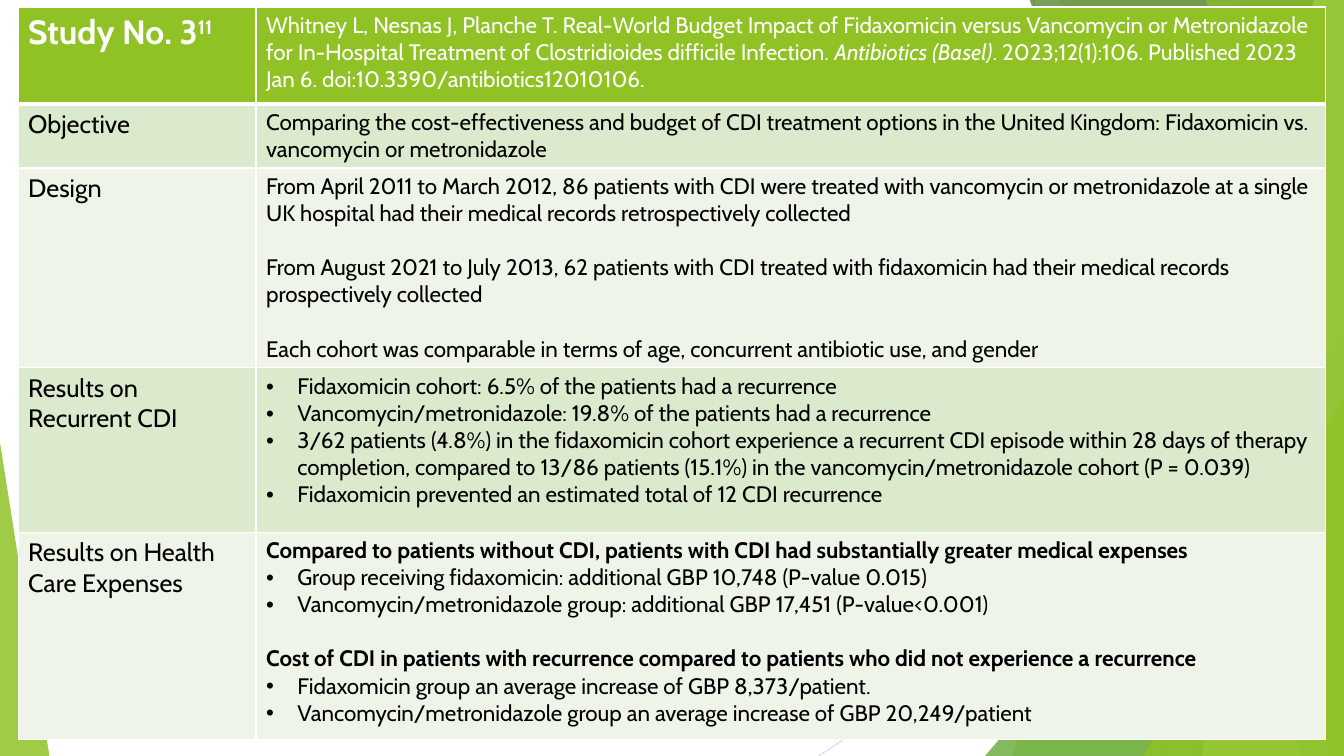
from dataclasses import dataclass

from lxml.etree import SubElement
from pptx import Presentation
from pptx.dml.color import RGBColor as Rgb
from pptx.enum.shapes import MSO_CONNECTOR as Conn, MSO_SHAPE as Shape
from pptx.oxml.ns import qn
from pptx.util import Inches, Pt


@dataclass(frozen=True)
class Theme:
    font: str = "Cabin"
    green: str = "90C226"
    leaf: str = "54A021"
    moss: str = "3F7819"
    lime: str = "C0E474"
    band: tuple = ("DBE9CD", "EEF4E8")
    white: str = "FFFFFF"
    black: str = "000000"
    rays: tuple = ("BFBFBF", "D9D9D9")
    title: int = 24
    label: int = 18
    body: int = 16
    gap: float = 19.4


theme = Theme()


def paint(shape, color, alpha):
    """Fill a shape with a see-through colour, without outline or shadow."""
    shape.shadow.inherit = False
    shape.line.fill.background()
    shape.fill.solid()
    shape.fill.fore_color.rgb = Rgb.from_string(color)
    tint = shape.fill._xPr.find(qn("a:solidFill"))[0]
    SubElement(tint, qn("a:alpha"), val=str(alpha * 1000))


def style(para, size, color, bold=False):
    for run in para.runs:
        run.font.name = theme.font
        run.font.size = Pt(size)
        run.font.bold = bold
        run.font.color.rgb = Rgb.from_string(color)


deck = Presentation()
deck.slide_width, deck.slide_height = Inches(13.33), Inches(7.5)
slide = deck.slides.add_slide(deck.slide_layouts[6])
shapes = slide.shapes

# Background rays and facets
rays = [(10.25, 0, 11.58, 7.5), (13.33, 4.03, 8.12, 7.5)]
for ends, color in zip(rays, theme.rays):
    ray = shapes.add_connector(Conn.STRAIGHT, *map(Inches, ends))
    ray.line.color.rgb = Rgb.from_string(color)
    ray.line.width = Pt(0.75)
    SubElement(ray._element.spPr, qn("a:effectLst"))

# Each facet runs from its top left and bottom left to the right edge;
# each corner is a right triangle: left, top, width, height, apex.
facets = [
    ("facet", (12.28, 10.04), theme.green, 30),
    ("facet", (10.5, 11.83), theme.green, 20),
    ("corner", (9.77, 3.33, 3.56, 4.17, 1), theme.leaf, 72),
    ("facet", (10.21, 12.91), theme.moss, 70),
    ("facet", (13.03, 11.92), theme.lime, 70),
    ("facet", (11.96, 13.18), theme.green, 65),
    ("corner", (11.34, 3.93, 1.99, 3.57, 1), theme.green, 80),
    ("corner", (0, 4.39, 0.49, 3.11, 0), theme.green, 85),
]
for kind, place, color, alpha in facets:
    if kind == "facet":
        top, foot = place
        path = shapes.build_freeform(Inches(top), Inches(-0.01))
        points = [(13.33, -0.01), (13.33, 7.5), (foot, 7.5)]
        path.add_line_segments([(Inches(x), Inches(y)) for x, y in points])
        part = path.convert_to_shape()
    else:
        *box, apex = place
        part = shapes.add_shape(Shape.ISOSCELES_TRIANGLE, *map(Inches, box))
        part.adjustments[0] = apex
    paint(part, color, alpha)

# Study table
cite = [
    "Whitney L, Nesnas J, Planche T. Real-World Budget Impact of Fidaxomicin versus "
    "Vancomycin or Metronidazole for In-Hospital Treatment of Clostridioides difficile "
    "Infection. ",
    "Antibiotics (Basel)",
    ". 2023;12(1):106. Published 2023 Jan 6. doi:10.3390/antibiotics12010106.",
]
# Paragraph kinds: text, gap (text after a space), bullet, head, gap head
study = [
    ("Objective", [
        ("text", "Comparing the cost-effectiveness and budget of CDI treatment options in "
                 "the United Kingdom: Fidaxomicin vs. vancomycin or metronidazole"),
    ]),
    ("Design", [
        ("text", "From April 2011 to March 2012, 86 patients with CDI were treated with "
                 "vancomycin or metronidazole at a single UK hospital had their medical "
                 "records retrospectively collected"),
        ("gap", "From August 2021 to July 2013, 62 patients with CDI treated with "
                "fidaxomicin had their medical records prospectively collected"),
        ("gap", "Each cohort was comparable in terms of age, concurrent antibiotic use, "
                "and gender"),
    ]),
    ("Results on Recurrent CDI", [
        ("bullet", "Fidaxomicin cohort: 6.5% of the patients had a recurrence"),
        ("bullet", "Vancomycin/metronidazole: 19.8% of the patients had a recurrence"),
        ("bullet", "3/62 patients (4.8%) in the fidaxomicin cohort experience a recurrent "
                   "CDI episode within 28 days of therapy completion, compared to 13/86 "
                   "patients (15.1%) in the vancomycin/metronidazole cohort (P = 0.039)"),
        ("bullet", "Fidaxomicin prevented an estimated total of 12 CDI recurrence"),
    ]),
    ("Results on Health Care Expenses", [
        ("head", "Compared to patients without CDI, patients with CDI had substantially "
                 "greater medical expenses"),
        ("bullet", "Group receiving fidaxomicin: additional GBP 10,748 (P-value 0.015)"),
        ("bullet", "Vancomycin/metronidazole group: additional GBP 17,451 (P-value<0.001)"),
        ("gap head", "Cost of CDI in patients with recurrence compared to patients who did "
                     "not experience a recurrence"),
        ("bullet", "Fidaxomicin group an average increase of GBP 8,373/patient."),
        ("bullet", "Vancomycin/metronidazole group an average increase of GBP "
                   "20,249/patient"),
    ]),
]
widths = [2.36, 10.61]
heights = [0.96, 0.62, 1.93, 1.63, 2.06]
box = map(Inches, (0.18, 0.07, sum(widths), sum(heights)))
table = shapes.add_table(len(heights), len(widths), *box).table
table.first_row = table.horz_banding = False
for col, width in zip(table.columns, widths):
    col.width = Inches(width)
for row, height in zip(table.rows, heights):
    row.height = Inches(height)

for r, row in enumerate(table.rows):
    for cell in row.cells:
        props = cell._tc.get_or_add_tcPr()
        for side in ("lnL", "lnR", "lnT", "lnB"):
            thick = (r == 0 and side == "lnB") or (r == 1 and side == "lnT")
            edge = SubElement(props, qn(f"a:{side}"), w=str(Pt(3 if thick else 1)))
            ink = SubElement(edge, qn("a:solidFill"))
            SubElement(ink, qn("a:srgbClr"), val=theme.white)
        cell.fill.solid()
        fill = theme.band[(r - 1) % 2] if r else theme.green
        cell.fill.fore_color.rgb = Rgb.from_string(fill)

heads = [(["Study No. 3", "11"], theme.title, True), (cite, theme.body, False)]
for cell, (parts, size, bold) in zip(table.rows[0].cells, heads):
    para = cell.text_frame.paragraphs[0]
    for part in parts:
        para.add_run().text = part
    style(para, size, theme.white, bold)
table.cell(0, 0).text_frame.paragraphs[0].runs[1].font._element.set("baseline", "30000")
table.cell(0, 1).text_frame.paragraphs[0].runs[1].font.italic = True

for r, (label, items) in enumerate(study, 1):
    name, notes = (cell.text_frame for cell in table.rows[r].cells)
    name.text = label
    style(name.paragraphs[0], theme.label, theme.black)
    notes.text = "\n".join(text for _, text in items)
    for para, (kind, _) in zip(notes.paragraphs, items):
        style(para, theme.body, theme.black, "head" in kind)
        if "gap" in kind:
            para.space_before = Pt(theme.gap)
        if kind == "bullet":
            props = para._p.get_or_add_pPr()
            props.set("marL", str(Inches(0.31)))
            props.set("indent", str(Inches(-0.31)))
            SubElement(props, qn("a:buFont"), typeface="Arial")
            SubElement(props, qn("a:buChar"), char="•")

deck.save("out.pptx")
